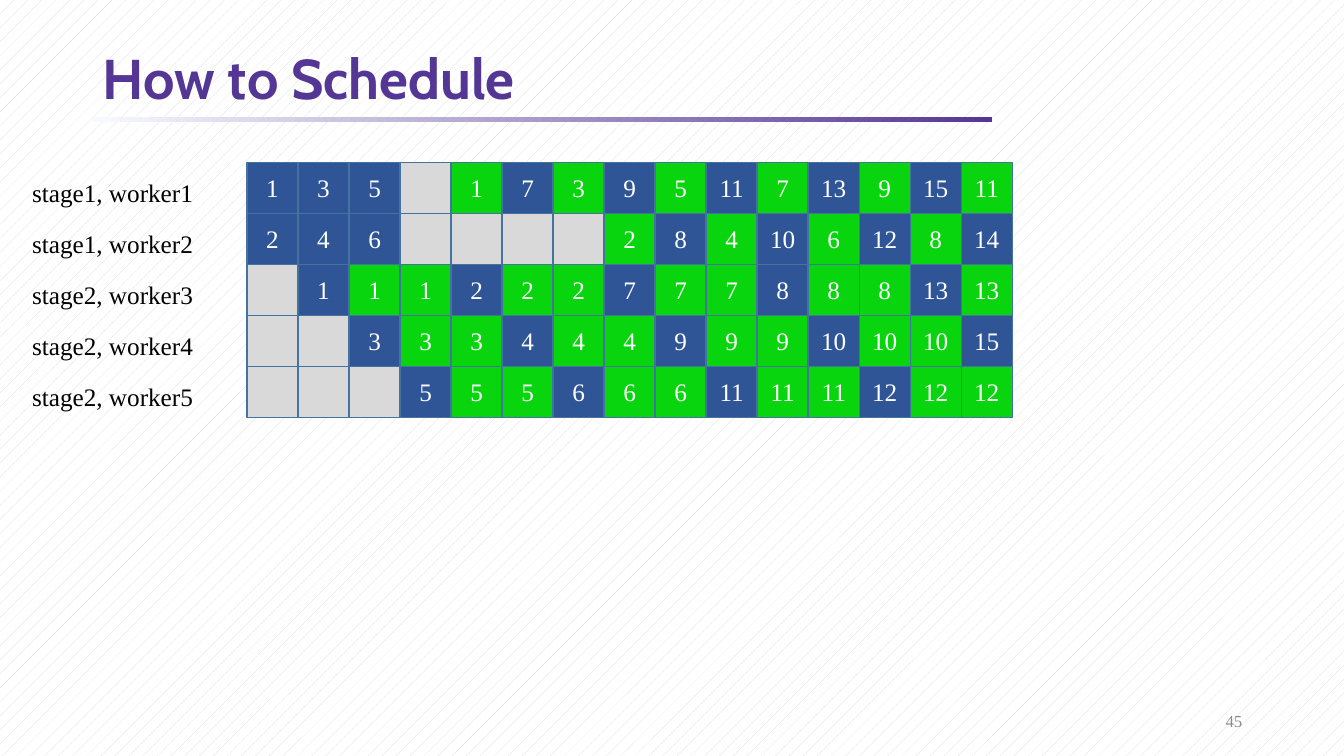
from dataclasses import dataclass

from pptx import Presentation
from pptx.dml.color import RGBColor
from pptx.enum.dml import MSO_PATTERN
from pptx.enum.shapes import MSO_SHAPE
from pptx.enum.text import MSO_ANCHOR, MSO_AUTO_SIZE, PP_ALIGN
from pptx.util import Inches, Pt


@dataclass(frozen=True)
class Theme:
    accent: str = "543795"
    accent_fade: str = "F7FAFD"
    forward: str = "2F5597"
    backward: str = "09D50E"
    idle: str = "D9D9D9"
    border: str = "43739E"
    paper: str = "FFFFFF"
    ink: str = "000000"
    muted: str = "8C8C8C"
    heading_font: str = "Cabin"
    body_font: str = "Times New Roman"
    title_size: int = 40
    body_size: int = 18
    number_size: int = 12


THEME = Theme()
WIDTH, HEIGHT = 13.33, 7.5
CELL = 0.506
GRID_LEFT, GRID_TOP = 2.45, 1.61
LABEL_LEFT = 0.22
IDLE = "-"

# Micro-batch handled in each time slot
SCHEDULE = {
    "stage1, worker1": "1 3 5 - 1 7 3 9 5 11 7 13 9 15 11",
    "stage1, worker2": "2 4 6 - - - - 2 8 4 10 6 12 8 14",
    "stage2, worker3": "- 1 1 1 2 2 2 7 7 7 8 8 8 13 13",
    "stage2, worker4": "- - 3 3 3 4 4 4 9 9 9 10 10 10 15",
    "stage2, worker5": "- - - 5 5 5 6 6 6 11 11 11 12 12 12",
}


def rgb(value):
    return RGBColor.from_string(value)


def box(left, top, width, height):
    return [Inches(v) for v in (left, top, width, height)]


def write(tf, text, color, size=THEME.body_size, font=THEME.body_font,
          bold=False, frame=None, paragraph=None):
    """Set one paragraph of text; frame and paragraph hold extra attributes."""
    p = tf.paragraphs[0]
    r = p.add_run()
    r.text = text
    r.font.color.rgb = rgb(color)
    formats = (
        (tf, frame or {}),
        (p, paragraph or {}),
        (r.font, {"name": font, "size": Pt(size), "bold": bold}),
    )
    for target, values in formats:
        for name, value in values.items():
            setattr(target, name, value)


def add_rect(s, bounds):
    sp = s.shapes.add_shape(MSO_SHAPE.RECTANGLE, *bounds)
    sp.shadow.inherit = False
    return sp


def add_background(s):
    fill = s.background.fill
    fill.patterned()
    fill.pattern = MSO_PATTERN.PERCENT_5
    fill.fore_color.rgb = rgb(THEME.idle)
    fill.back_color.rgb = rgb(THEME.paper)


def add_title(s, text):
    title = s.shapes.title
    title.left, title.top, title.width, title.height = box(0.92, 0.43, 11.5, 0.75)
    write(title.text_frame, text, THEME.accent, THEME.title_size,
          THEME.heading_font, bold=True,
          frame={"vertical_anchor": MSO_ANCHOR.MIDDLE,
                 "auto_size": MSO_AUTO_SIZE.NONE},
          paragraph={"alignment": PP_ALIGN.LEFT, "line_spacing": 0.9})


def add_title_rule(s):
    sp = add_rect(s, box(0.92, 1.16, 8.92, 0.05))
    sp.line.fill.background()
    sp.fill.gradient()
    sp.fill.gradient_angle = 0
    for stop, color in zip(sp.fill.gradient_stops,
                           (THEME.accent_fade, THEME.accent)):
        stop.color.rgb = rgb(color)


def add_page_number(s, number):
    sp = s.shapes.add_textbox(*box(WIDTH - 3.91, HEIGHT - 0.55, 3, 0.4))
    write(sp.text_frame, number, THEME.muted, THEME.number_size,
          frame={"word_wrap": True, "vertical_anchor": MSO_ANCHOR.MIDDLE},
          paragraph={"alignment": PP_ALIGN.RIGHT})


def add_cell(s, col, row, batch, color):
    sp = add_rect(s, box(GRID_LEFT + col * CELL, GRID_TOP + row * CELL, CELL, CELL))
    sp.fill.solid()
    sp.fill.fore_color.rgb = rgb(color)
    sp.line.color.rgb = rgb(THEME.border)
    sp.line.width = Pt(1)
    if batch != IDLE:
        write(sp.text_frame, batch, THEME.paper,
              frame={"vertical_anchor": MSO_ANCHOR.MIDDLE},
              paragraph={"alignment": PP_ALIGN.CENTER})


def add_row_label(s, row, text):
    sp = s.shapes.add_textbox(
        *box(LABEL_LEFT, GRID_TOP + (row + 0.2) * CELL, 1.81, 0.4))
    write(sp.text_frame, text, THEME.ink,
          frame={"word_wrap": False, "auto_size": MSO_AUTO_SIZE.SHAPE_TO_FIT_TEXT})


def add_worker(s, row, label, slots):
    """Draw one row: a batch runs forward the first time, backward after that."""
    add_row_label(s, row, label)
    seen = set()
    for col, batch in enumerate(slots.split()):
        if batch == IDLE:
            color = THEME.idle
        else:
            color = THEME.backward if batch in seen else THEME.forward
        seen.add(batch)
        add_cell(s, col, row, batch, color)


def main():
    prs = Presentation()
    prs.slide_width, prs.slide_height = Inches(WIDTH), Inches(HEIGHT)
    s = prs.slides.add_slide(prs.slide_layouts.get_by_name("Title Only"))
    add_background(s)
    add_title_rule(s)
    add_title(s, "How to Schedule")
    add_page_number(s, "45")
    for row, (label, slots) in enumerate(SCHEDULE.items()):
        add_worker(s, row, label, slots)
    prs.save("out.pptx")


if __name__ == "__main__":
    main()
